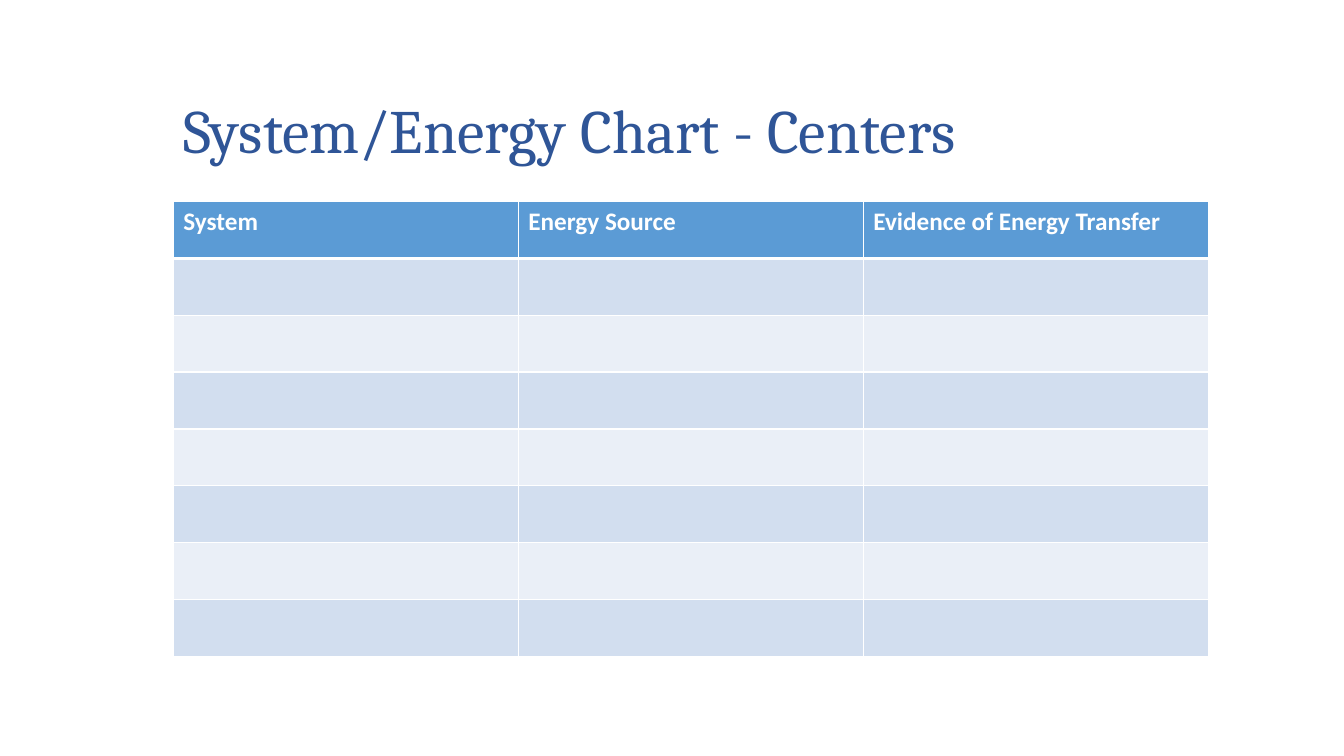
import dataclasses

import lxml.etree
import pptx
import pptx.dml.color
import pptx.enum.text
import pptx.oxml.ns
import pptx.util

PX = 9525


@dataclasses.dataclass(frozen=True)
class Theme:
    title_font: str = "Cambria"
    body_font: str = "Calibri"
    title_size: int = 44
    header_size: int = 18
    title: str = "2F5597"
    header: str = "5B9BD5"
    white: str = "FFFFFF"
    bands: tuple = ("D2DEEF", "EAEFF7")
    rule: int = 1
    header_rule: int = 3


THEME = Theme()
HEADINGS = ("System", "Energy Source", "Evidence of Energy Transfer")
BODY_ROWS = 7


def px(n):
    return pptx.util.Emu(round(n * PX))


def rgb(value):
    return pptx.dml.color.RGBColor.from_string(value)


def set_font(p, name, size, color, bold=False):
    p.font.name = name
    p.font.size = pptx.util.Pt(size)
    p.font.bold = bold
    p.font.color.rgb = rgb(color)


def set_borders(cell, **widths):
    qn = pptx.oxml.ns.qn
    tc_pr = cell._tc.get_or_add_tcPr()
    for side in "LRTB":
        width = pptx.util.Pt(widths.get(side, THEME.rule))
        ln = lxml.etree.SubElement(tc_pr, qn("a:ln" + side), w=str(width))
        fill = lxml.etree.SubElement(ln, qn("a:solidFill"))
        lxml.etree.SubElement(fill, qn("a:srgbClr"), val=THEME.white)


def add_title(s, text, x, y, w, h):
    tf = s.shapes.add_textbox(px(x), px(y), px(w), px(h)).text_frame
    tf.word_wrap = True
    tf.vertical_anchor = pptx.enum.text.MSO_ANCHOR.MIDDLE
    p = tf.paragraphs[0]
    p.text = text
    set_font(p, THEME.title_font, THEME.title_size, THEME.title)


def add_energy_table(s, x, y, w, h):
    rows = BODY_ROWS + 1
    table = s.shapes.add_table(
        rows, len(HEADINGS), px(x), px(y), px(w), px(h)).table
    for column in table.columns:
        column.width = px(w / len(HEADINGS))
    for i, row in enumerate(table.rows):
        row.height = px(h / rows)
        for cell in row.cells:
            if i == 0:
                set_borders(cell, B=THEME.header_rule)
            elif i == 1:
                set_borders(cell, T=THEME.header_rule)
            else:
                set_borders(cell)
            cell.fill.solid()
            color = THEME.bands[(i - 1) % 2] if i else THEME.header
            cell.fill.fore_color.rgb = rgb(color)
    for cell, heading in zip(table.rows[0].cells, HEADINGS):
        p = cell.text_frame.paragraphs[0]
        p.text = heading
        set_font(p, THEME.body_font, THEME.header_size, THEME.white, True)


def main():
    prs = pptx.Presentation()
    prs.slide_width, prs.slide_height = px(1280), px(720)
    s = prs.slides.add_slide(prs.slide_layouts[6])
    add_title(s, "System/Energy Chart - Centers", 165, 53, 948, 139)
    add_energy_table(s, 165, 192, 986, 433)
    prs.save("out.pptx")


if __name__ == "__main__":
    main()
